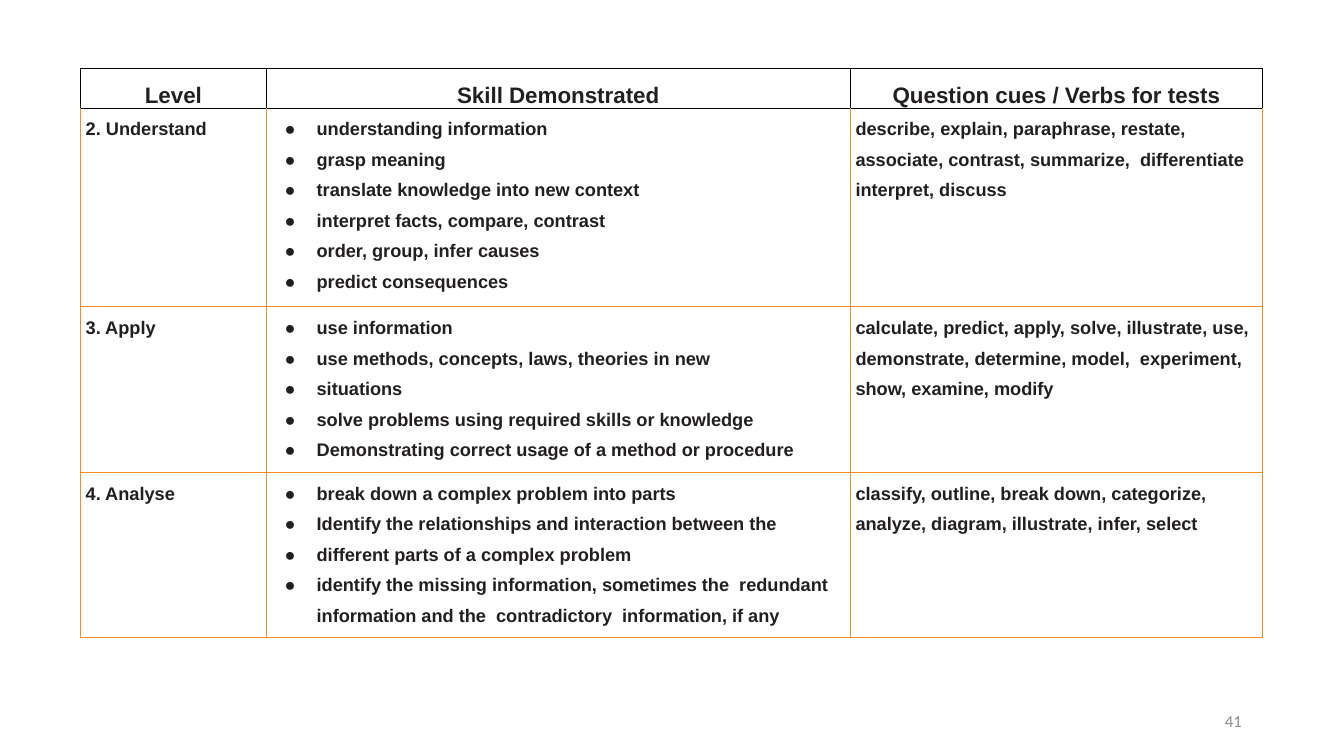
from lxml import etree
from pptx import Presentation
from pptx.dml.color import RGBColor
from pptx.enum.text import MSO_ANCHOR, PP_ALIGN
from pptx.oxml.ns import qn
from pptx.util import Cm, Pt

CENTER, LEFT, RIGHT = PP_ALIGN.CENTER, PP_ALIGN.LEFT, PP_ALIGN.RIGHT
MIDDLE = MSO_ANCHOR.MIDDLE
BLANK_LAYOUT = 6

COLORS = {"text": "231F20", "grid": "F68B1E", "header": "000000", "number": "8C8C8C"}
HEADER_FONT = {"name": "Arial", "size": Pt(16), "bold": True}
BODY_FONT = {"name": "Arial", "size": Pt(13), "bold": True}
NUMBER_FONT = {"name": "Calibri", "size": Pt(12)}

COLUMN_WIDTHS = [4.68, 14.72, 10.39]
ROW_HEIGHTS = [0.94, 5.01, 4.17, 4.17]
BULLET_COLUMN = 1
TEXT_INDENT = Cm(0.13)
BULLET_MARGIN, BULLET_HANG = Cm(1.27), Cm(0.81)

HEADINGS = ["Level", "Skill Demonstrated", "Question cues / Verbs for tests"]
LEVELS = [
    (
        ["2. Understand"],
        [
            "understanding information",
            "grasp meaning",
            "translate knowledge into new context",
            "interpret facts, compare, contrast",
            "order, group, infer causes",
            "predict consequences",
        ],
        [
            "describe, explain, paraphrase, restate,",
            "associate, contrast, summarize,  differentiate",
            "interpret, discuss",
        ],
    ),
    (
        ["3. Apply"],
        [
            "use information",
            "use methods, concepts, laws, theories in new",
            "situations",
            "solve problems using required skills or knowledge",
            "Demonstrating correct usage of a method or procedure",
        ],
        [
            "calculate, predict, apply, solve, illustrate, use,",
            "demonstrate, determine, model,  experiment,",
            "show, examine, modify",
        ],
    ),
    (
        ["4. Analyse"],
        [
            "break down a complex problem into parts",
            "Identify the relationships and interaction between the",
            "different parts of a complex problem",
            "identify the missing information, sometimes the  redundant "
            "information and the  contradictory  information, if any",
        ],
        [
            "classify, outline, break down, categorize,",
            "analyze, diagram, illustrate, infer, select",
        ],
    ),
]


def write_lines(frame, lines, font, color, align=LEFT, spacing=1.0):
    for index, line in enumerate(lines):
        para = frame.paragraphs[0] if index == 0 else frame.add_paragraph()
        para.alignment, para.line_spacing = align, spacing
        span = para.add_run()
        span.text = line
        for name, value in font.items():
            setattr(span.font, name, value)
        span.font.color.rgb = RGBColor.from_string(COLORS[color])


def indent(para, bullet):
    properties = para._p.get_or_add_pPr()
    properties.set("marL", str(BULLET_MARGIN if bullet else TEXT_INDENT))
    if bullet:
        properties.set("indent", str(-BULLET_HANG))
        color = etree.SubElement(properties, qn("a:buClr"))
        etree.SubElement(color, qn("a:srgbClr"), val=COLORS["text"])
        etree.SubElement(properties, qn("a:buFont"), typeface="Arial")
        etree.SubElement(properties, qn("a:buChar"), char="●")


def draw_borders(cell, colors):
    """Set the left, right, top and bottom lines, in that order."""
    properties = cell._tc.get_or_add_tcPr()
    for index, (side, color) in enumerate(zip("LRTB", colors)):
        line = etree.Element(qn(f"a:ln{side}"), w=str(Pt(0.75)))
        fill = etree.SubElement(line, qn("a:solidFill"))
        etree.SubElement(fill, qn("a:srgbClr"), val=COLORS[color])
        properties.insert(index, line)


def add_levels_table(page, left, top):
    rows = [[[heading] for heading in HEADINGS], *LEVELS]
    width, height = Cm(sum(COLUMN_WIDTHS)), Cm(sum(ROW_HEIGHTS))
    table = page.shapes.add_table(
        len(rows), len(HEADINGS), left, top, width, height).table
    table.first_row = table.horz_banding = False
    for column, size in zip(table.columns, COLUMN_WIDTHS):
        column.width = Cm(size)

    for row_index, row in enumerate(rows):
        table.rows[row_index].height = Cm(ROW_HEIGHTS[row_index])
        is_header = row_index == 0
        side = "header" if is_header else "grid"
        upper = "header" if row_index <= 1 else "grid"
        for column_index, lines in enumerate(row):
            cell = table.cell(row_index, column_index)
            cell.fill.background()
            cell.margin_left = cell.margin_right = cell.margin_bottom = 0
            cell.margin_top = Cm(0.05 if is_header else 0.03)
            draw_borders(cell, [side, side, upper, side])
            font = HEADER_FONT if is_header else BODY_FONT
            align = CENTER if is_header else LEFT
            write_lines(cell.text_frame, lines, font, "text", align, 1.5)
            if not is_header:
                for para in cell.text_frame.paragraphs:
                    indent(para, column_index == BULLET_COLUMN)


def add_page_number(page, left, top, width, height):
    frame = page.shapes.add_textbox(left, top, width, height).text_frame
    frame.word_wrap = True
    frame.vertical_anchor = MIDDLE
    write_lines(frame, ["41"], NUMBER_FONT, "number", RIGHT)


def main():
    deck = Presentation()
    deck.slide_width, deck.slide_height = Cm(33.87), Cm(19.05)
    page = deck.slides.add_slide(deck.slide_layouts[BLANK_LAYOUT])
    add_levels_table(page, Cm(2.03), Cm(1.73))
    add_page_number(page, Cm(23.93), Cm(17.65), Cm(7.62), Cm(1.02))
    deck.save("out.pptx")


if __name__ == "__main__":
    main()
